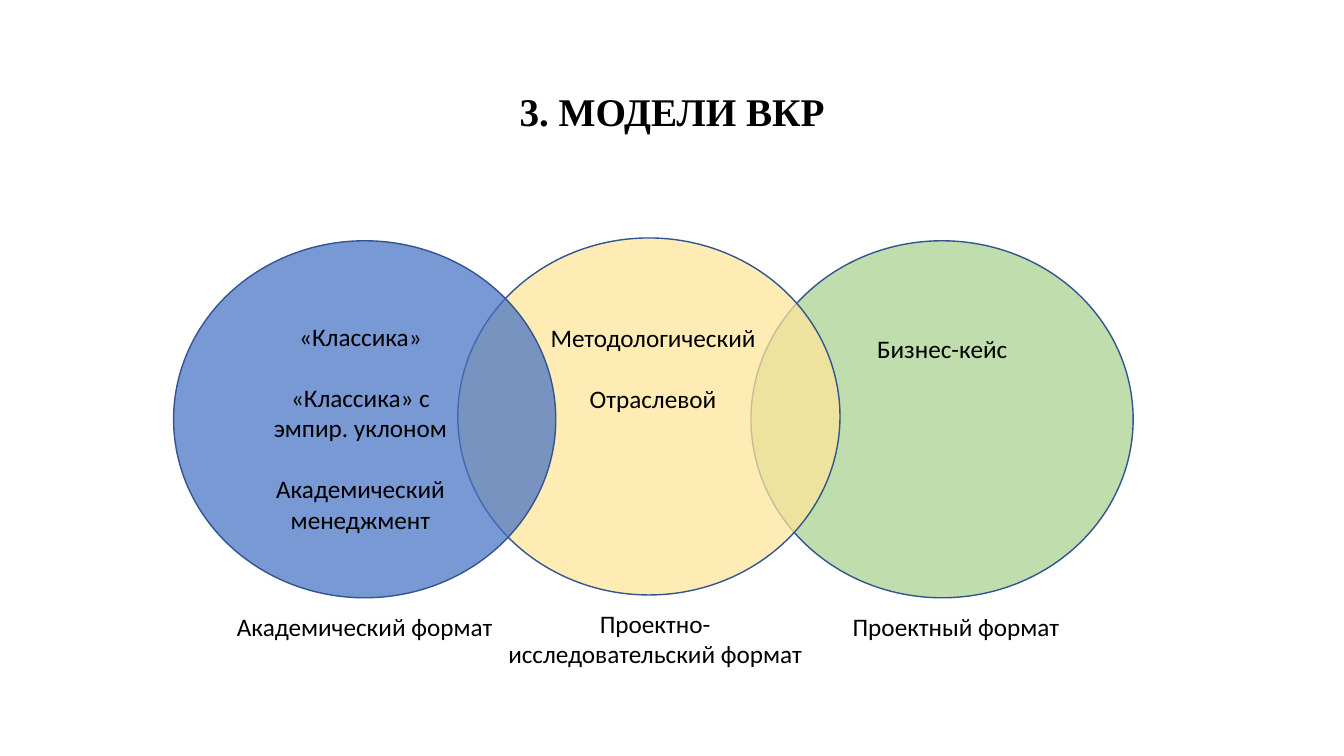
import pptx
import pptx.util
import pptx.dml.color
import pptx.enum.shapes
import pptx.enum.text
import pptx.oxml
import pptx.oxml.ns

Pt = pptx.util.Pt
RGB = pptx.dml.color.RGBColor
ALIGN = pptx.enum.text.PP_ALIGN
ANCHOR = pptx.enum.text.MSO_ANCHOR
FIT = pptx.enum.text.MSO_AUTO_SIZE

BLACK = RGB(0x00, 0x00, 0x00)
EDGE = RGB(0x32, 0x54, 0x91)
BLUE = RGB(0x44, 0x72, 0xC4)
YELLOW = RGB(0xFF, 0xE6, 0x99)
GREEN = RGB(0xA9, 0xD1, 0x8E)

WIDE, HIGH = 273, 255
LABEL = 227
LINE = 22


def write(frame, lines, size=18, font="Calibri", bold=False,
          align=ALIGN.CENTER, anchor=ANCHOR.TOP, gap=0, pitch=None):
    frame.word_wrap = True
    frame.vertical_anchor = anchor
    for i, line in enumerate(lines):
        para = frame.paragraphs[0] if i == 0 else frame.add_paragraph()
        para.alignment = align
        para.space_before = Pt(gap if i else 0)
        if pitch:
            para.line_spacing = pitch
        run = para.add_run()
        run.text = line
        run.font.size = Pt(size)
        run.font.name = font
        run.font.bold = bold
        run.font.color.rgb = BLACK


def note(slide, left, top, width, height, lines, **style):
    box = slide.shapes.add_textbox(Pt(left), Pt(top), Pt(width), Pt(height))
    write(box.text_frame, lines, **style)
    box.text_frame.auto_size = FIT.SHAPE_TO_FIT_TEXT


def fade(shape, share):
    color = shape.fill._xPr.find(".//" + pptx.oxml.ns.qn("a:srgbClr"))
    alpha = pptx.oxml.parse_xml(
        f'<a:alpha {pptx.oxml.ns.nsdecls("a")} val="{share * 1000}"/>')
    color.append(alpha)


def circle(slide, left, top, color, lines, inner, label, shift, rows=1,
           align=ALIGN.CENTER):
    oval = slide.shapes.add_shape(
        pptx.enum.shapes.MSO_SHAPE.OVAL, Pt(left), Pt(top), Pt(WIDE), Pt(HIGH))
    oval.shadow.inherit = False
    oval.fill.solid()
    oval.fill.fore_color.rgb = color
    fade(oval, 72)
    oval.line.color.rgb = EDGE
    oval.line.width = Pt(1)
    dx, dy, width, height = inner
    note(slide, left + dx, top + dy, width, height, lines,
         gap=LINE, align=align)
    note(slide, left + shift, top + HIGH + 6, LABEL, 7 + LINE * rows, [label])


def head(slide, left, top, width, height, text):
    title = slide.shapes.title
    title.left, title.top = Pt(left), Pt(top)
    title.width, title.height = Pt(width), Pt(height)
    write(title.text_frame, [text], size=28, font="Times New Roman",
          bold=True, anchor=ANCHOR.MIDDLE, pitch=0.9)


def main():
    deck = pptx.Presentation()
    deck.slide_width, deck.slide_height = Pt(960), Pt(540)
    slide = deck.slides.add_slide(deck.slide_layouts[5])
    head(slide, 66, 28.8, 828, 104.4, "3. МОДЕЛИ ВКР")
    circle(slide, 536.4, 172, GREEN, ["Бизнес-кейс"],
           (83, 62.5, 127.4, 29), "Проектный формат", 33, align=ALIGN.LEFT)
    circle(slide, 327, 170, YELLOW, ["Методологический", "Отраслевой"],
           (39.5, 57, 200, 73), "Проектно-исследовательский формат", 27.5,
           rows=2)
    circle(slide, 124, 172, BLUE,
           ["«Классика»", "«Классика» с эмпир. уклоном",
            "Академический менеджмент"],
           (64, 54, 139, 181), "Академический формат", 23)
    deck.save("out.pptx")


if __name__ == "__main__":
    main()
